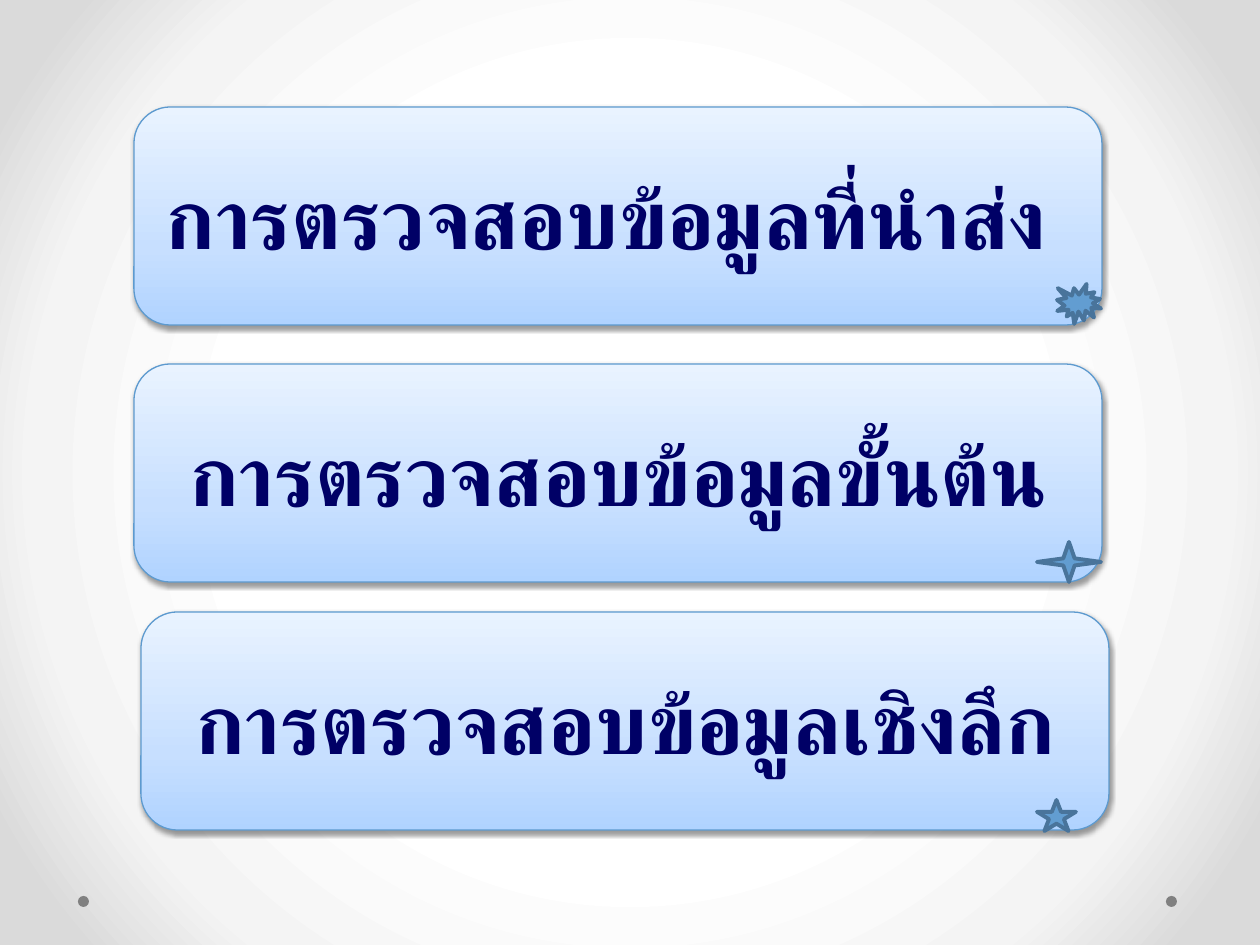
from lxml.etree import SubElement
from pptx import Presentation
from pptx.dml.color import RGBColor
from pptx.enum.shapes import MSO_SHAPE
from pptx.enum.text import MSO_ANCHOR, PP_ALIGN
from pptx.oxml import parse_xml
from pptx.oxml.ns import nsdecls, qn
from pptx.util import Pt

PX = 914400 / 126
COLORS = {
    "text": "000066",
    "panel_line": "5D9ACF",
    "badge": "629DD1",
    "badge_line": "49749B",
    "dot": "808080",
    "shadow": "000000",
}
PANEL_STOPS = [(0, "B0D3FF"), (35, "C7DFFF"), (100, "E9F3FF")]
BACK_STOPS = [(50, "FFFFFF"), (76, "F4F4F4"), (92, "DADADA")]
LINEAR_UP = '<a:lin ang="16200000" scaled="0"/>'
RADIAL = '<a:path path="circle"><a:fillToRect l="50000" t="50000" r="50000" b="50000"/></a:path>'
PANEL_W, PANEL_H = 968, 218
PANELS = [
    (134, 107, "การตรวจสอบข้อมูลที่นำส่ง ", MSO_SHAPE.EXPLOSION1, (923, 177, 44, 40)),
    (134, 364, "การตรวจสอบข้อมูลขั้นต้น", MSO_SHAPE.STAR_4_POINT, (903, 178, 64, 40)),
    (141, 612, "การตรวจสอบข้อมูลเชิงลึก", MSO_SHAPE.STAR_5_POINT, (896, 188, 39, 31)),
]


def emu(px):
    return round(px * PX)


def rgb(name):
    return RGBColor.from_string(COLORS[name])


def set_gradient(parent, stops, direction):
    gs = "".join(
        f'<a:gs pos="{pos * 1000}"><a:srgbClr val="{color}"/></a:gs>' for pos, color in stops
    )
    grad = parse_xml(
        f'<a:gradFill {nsdecls("a")} rotWithShape="1"><a:gsLst>{gs}</a:gsLst>{direction}</a:gradFill>'
    )
    parent.replace(parent.find(qn("a:solidFill")), grad)


def add_shape(s, kind, box, fill, line=None, width=0):
    sp = s.shapes.add_shape(kind, *map(emu, box))
    sp.shadow.inherit = False
    sp.fill.solid()
    sp.fill.fore_color.rgb = rgb(fill)
    if line:
        sp.line.color.rgb = rgb(line)
        sp.line.width = Pt(width)
    else:
        sp.line.fill.background()
    return sp


def add_shadow(sp):
    effects = sp._element.spPr.find(qn("a:effectLst"))
    shadow = SubElement(
        effects, qn("a:outerShdw"), blurRad="40000", dist="20000", dir="5400000", rotWithShape="0"
    )
    color = SubElement(shadow, qn("a:srgbClr"), val=COLORS["shadow"])
    SubElement(color, qn("a:alpha"), val="38000")


def add_panel(s, x, y, text, badge, badge_box):
    sp = add_shape(
        s, MSO_SHAPE.ROUNDED_RECTANGLE, (x, y, PANEL_W, PANEL_H), "badge", "panel_line", 0.75
    )
    set_gradient(sp._element.spPr, PANEL_STOPS, LINEAR_UP)
    add_shadow(sp)
    tf = sp.text_frame
    tf.text = text
    tf.word_wrap = True
    tf.vertical_anchor = MSO_ANCHOR.MIDDLE
    p = tf.paragraphs[0]
    p.alignment = PP_ALIGN.CENTER
    font = p.runs[0].font
    font.name = "Calibri"
    font.size = Pt(48)
    font.bold = True
    font.color.rgb = rgb("text")
    dx, dy, w, h = badge_box
    add_shape(s, badge, (x + dx, y + dy, w, h), "badge", "badge_line", 2.25)


def add_backdrop(s):
    fill = s.background.fill
    fill.solid()
    fill.fore_color.rgb = rgb("dot")
    set_gradient(s._element.cSld.find(qn("p:bg")).find(qn("p:bgPr")), BACK_STOPS, RADIAL)
    for x in (1166, 78):
        add_shape(s, MSO_SHAPE.OVAL, (x, 896, 11, 11), "dot")


def main():
    prs = Presentation()
    prs.slide_width, prs.slide_height = emu(1260), emu(945)
    s = prs.slides.add_slide(prs.slide_layouts[6])
    add_backdrop(s)
    for panel in PANELS:
        add_panel(s, *panel)
    prs.save("out.pptx")


if __name__ == "__main__":
    main()
